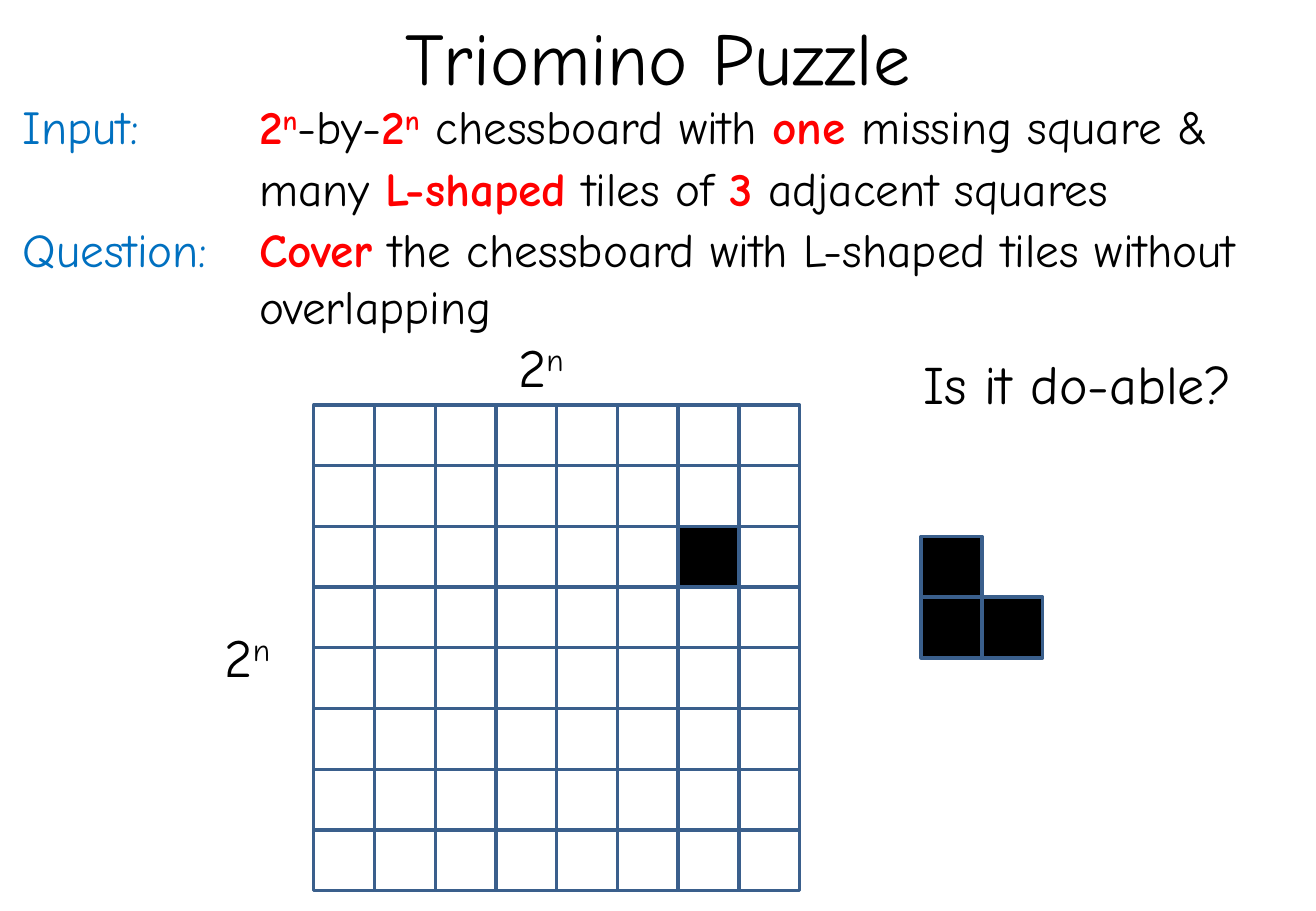
from dataclasses import dataclass

import pptx
import pptx.dml.color
import pptx.enum.shapes
import pptx.enum.text
import pptx.util

Pt = pptx.util.Pt
ALIGN = pptx.enum.text.PP_ALIGN
ANCHOR = pptx.enum.text.MSO_ANCHOR


@dataclass(frozen=True)
class Theme:
    font: str = "Comic Neue"
    black: str = "000000"
    red: str = "FF0000"
    blue: str = "0070C0"
    grid: str = "3A5F8C"
    title: int = 44
    label: int = 32
    body: int = 28


@dataclass(frozen=True)
class Span:
    text: str
    color: str = "000000"
    bold: bool = False
    superscript: bool = False


@dataclass(frozen=True)
class Square:
    left: float
    top: float
    filled: bool = False


THEME = Theme()
CELL = 36
BOARD_SIZE = 8
BOARD_LEFT, BOARD_TOP = 186, 240
MISSING = (2, 6)  # row, column
TILE_LEFT, TILE_TOP = 546, 318
TILE_CELLS = [(0, 0), (1, 0), (1, 1)]


def rgb(color: str) -> pptx.dml.color.RGBColor:
    return pptx.dml.color.RGBColor.from_string(color)


def key(text: str, superscript: bool = False) -> Span:
    return Span(text, THEME.red, bold=True, superscript=superscript)


def add_text(slide, paragraphs: list[list[Span]], *, left: float, top: float,
             width: float, height: float, size: int, align=ALIGN.LEFT,
             anchor=ANCHOR.TOP, wrap: bool = False, hanging: float = 0,
             space_before: float = 0) -> None:
    """Add a text box with one paragraph per list of spans."""
    sp = slide.shapes.add_textbox(Pt(left), Pt(top), Pt(width), Pt(height))
    tf = sp.text_frame
    tf.word_wrap = wrap
    tf.vertical_anchor = anchor
    for i, spans in enumerate(paragraphs):
        p = tf.add_paragraph() if i else tf.paragraphs[0]
        p.alignment = align
        if i and space_before:
            p.space_before = Pt(space_before)
        if hanging:
            pPr = p._p.get_or_add_pPr()
            pPr.set("marL", str(Pt(hanging)))
            pPr.set("indent", str(-Pt(hanging)))
        for span in spans:
            r = p.add_run()
            r.text = span.text
            r.font.name = THEME.font
            r.font.size = Pt(size)
            r.font.bold = span.bold
            r.font.color.rgb = rgb(span.color)
            if span.superscript:
                r._r.get_or_add_rPr().set("baseline", "30000")


def add_square(slide, square: Square) -> None:
    sp = slide.shapes.add_shape(pptx.enum.shapes.MSO_SHAPE.RECTANGLE,
                                Pt(square.left), Pt(square.top), Pt(CELL), Pt(CELL))
    sp.shadow.inherit = False
    if square.filled:
        sp.fill.solid()
        sp.fill.fore_color.rgb = rgb(THEME.black)
    else:
        sp.fill.background()
    sp.line.color.rgb = rgb(THEME.grid)
    sp.line.width = Pt(2)


def main() -> None:
    prs = pptx.Presentation()
    prs.slide_width, prs.slide_height = Pt(780), Pt(540)
    slide = prs.slides.add_slide(prs.slide_layouts[6])

    # Title
    add_text(slide, [[Span("Triomino Puzzle")]], left=39, top=-12, width=702, height=90,
             size=THEME.title, align=ALIGN.CENTER, anchor=ANCHOR.MIDDLE, wrap=True)

    # Problem statement
    statement = [
        [Span("Input:\t", THEME.blue), key("2"), key("n", True), Span("-by-"),
         key("2"), key("n", True), Span(" chessboard with "), key("one"),
         Span(" missing square &")],
        [Span("\tmany "), key("L-shaped"), Span(" tiles of "), key("3"),
         Span(" adjacent squares")],
        [Span("Question:\t", THEME.blue), key("Cover"),
         Span(" the chessboard with L-shaped tiles without overlapping")],
    ]
    add_text(slide, statement, left=6.5, top=54, width=773.5, height=149,
             size=THEME.body, wrap=True, hanging=140, space_before=3)

    # Chessboard with one missing square
    for row in range(BOARD_SIZE):
        for col in range(BOARD_SIZE):
            add_square(slide, Square(BOARD_LEFT + col * CELL, BOARD_TOP + row * CELL,
                                     (row, col) == MISSING))

    # L-shaped tile
    for row, col in TILE_CELLS:
        add_square(slide, Square(TILE_LEFT + col * CELL, TILE_TOP + row * CELL, True))

    # Question and board dimensions
    add_text(slide, [[Span("Is it do-able?")]], left=540, top=204, width=220, height=46,
             size=THEME.label)
    for left, top in [(126, 366), (300, 194)]:
        add_text(slide, [[Span("2"), Span("n", superscript=True)]], left=left, top=top,
                 width=45, height=46, size=THEME.label)

    prs.save("out.pptx")


if __name__ == "__main__":
    main()
